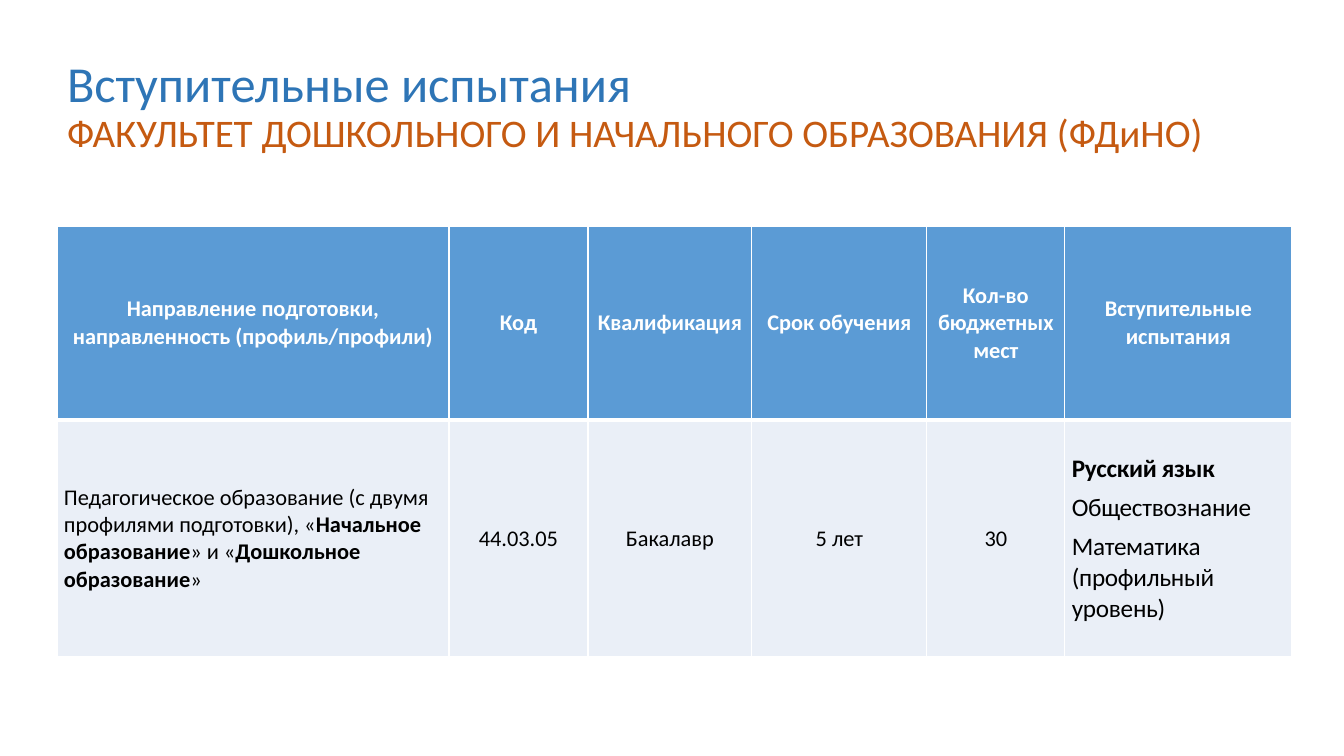
from lxml.etree import SubElement
from pptx import Presentation
from pptx.dml.color import RGBColor
from pptx.enum.text import MSO_ANCHOR, MSO_AUTO_SIZE, PP_ALIGN
from pptx.oxml.ns import qn
from pptx.util import Pt

FONT = "Calibri"
BLACK = RGBColor(0x00, 0x00, 0x00)
WHITE = RGBColor(0xFF, 0xFF, 0xFF)
TITLE_BLUE = RGBColor(0x2E, 0x75, 0xB6)
FACULTY_ORANGE = RGBColor(0xC5, 0x5A, 0x11)
HEADER_BLUE = RGBColor(0x5B, 0x9B, 0xD5)
BODY_BLUE = RGBColor(0xEA, 0xEF, 0xF7)

COLUMN_WIDTHS = [392, 139, 164, 175, 138, 227]
ROW_HEIGHTS = [194, 237]
HEADERS = [
    "Направление подготовки,\nнаправленность (профиль/профили)",
    "Код",
    "Квалификация",
    "Срок обучения",
    "Кол-во бюджетных мест",
    "Вступительные испытания",
]
PROGRAMME = [
    "Педагогическое образование (с двумя профилями подготовки), "
    "«**Начальное образование**» и «**Дошкольное образование**»",
    "44.03.05",
    "Бакалавр",
    "5 лет",
    "30",
]
EXAMS = "**Русский язык**\nОбществознание\nМатематика (профильный уровень)"


def px(n):
    return round(n * 914400 / 100.8)


class SlideBuilder:
    def __init__(self, prs):
        self.s = prs.slides.add_slide(prs.slide_layouts[5])

    def style(self, r, size, color, bold=False):
        r.font.name = FONT
        r.font.size = Pt(size)
        r.font.bold = bold
        r.font.color.rgb = color

    def title(self, x, y, w, h, lines):
        sp = self.s.shapes.title
        sp.left, sp.top, sp.width, sp.height = px(x), px(y), px(w), px(h)
        tf = sp.text_frame
        tf.text = "\n".join(text for text, _, _ in lines)
        tf.word_wrap = True
        tf.auto_size = MSO_AUTO_SIZE.NONE
        tf.vertical_anchor = MSO_ANCHOR.MIDDLE
        tf.margin_bottom = px(13)
        for p, (_, size, color) in zip(tf.paragraphs, lines):
            p.alignment = PP_ALIGN.LEFT
            p.line_spacing = 0.9
            self.style(p.runs[0], size, color)

    def table(self, x, y, widths, heights):
        frame = self.s.shapes.add_table(len(heights), len(widths), px(x), px(y),
                                        px(sum(widths)), px(sum(heights)))
        table = frame.table
        table.first_row = table.horz_banding = False
        for column, width in zip(table.columns, widths):
            column.width = px(width)
        for row, height in zip(table.rows, heights):
            row.height = px(height)
        return table

    def borders(self, cell, top, bottom):
        tcPr = cell._tc.get_or_add_tcPr()
        for side, width in (("L", 1), ("R", 1), ("T", top), ("B", bottom)):
            ln = SubElement(tcPr, qn(f"a:ln{side}"), w=str(Pt(width)))
            SubElement(SubElement(ln, qn("a:solidFill")), qn("a:srgbClr"), val=str(WHITE))

    def cell(self, cell, text, fill, color, size=16, bold=False,
             align=PP_ALIGN.CENTER, space_after=0, tracking=0, top=1, bottom=1):
        """Fill a cell; text between ** marks is bold."""
        self.borders(cell, top, bottom)
        cell.fill.solid()
        cell.fill.fore_color.rgb = fill
        cell.vertical_anchor = MSO_ANCHOR.MIDDLE
        cell.margin_left = cell.margin_right = px(7)
        cell.margin_top = cell.margin_bottom = 0
        tf = cell.text_frame
        for i, line in enumerate(text.split("\n")):
            p = tf.add_paragraph() if i else tf.paragraphs[0]
            p.alignment = align
            p.space_after = Pt(space_after)
            for j, part in enumerate(line.split("**")):
                if part:
                    r = p.add_run()
                    r.text = part
                    self.style(r, size, color, bold or j % 2 == 1)
                    if tracking:
                        r._r.get_or_add_rPr().set("spc", str(tracking))


def main():
    prs = Presentation()
    prs.slide_width, prs.slide_height = px(1344), px(756)
    slide = SlideBuilder(prs)
    slide.title(57, 27, 1287, 169, [
        ("Вступительные испытания", 36, TITLE_BLUE),
        ("ФАКУЛЬТЕТ ДОШКОЛЬНОГО И НАЧАЛЬНОГО ОБРАЗОВАНИЯ (ФДиНО)", 27.9, FACULTY_ORANGE),
    ])
    table = slide.table(57, 226, COLUMN_WIDTHS, ROW_HEIGHTS)
    for col, text in enumerate(HEADERS):
        slide.cell(table.cell(0, col), text, HEADER_BLUE, WHITE, bold=True, bottom=3)
    for col, text in enumerate(PROGRAMME):
        align = PP_ALIGN.CENTER if col else PP_ALIGN.LEFT
        slide.cell(table.cell(1, col), text, BODY_BLUE, BLACK, align=align, top=3)
    slide.cell(table.cell(1, len(PROGRAMME)), EXAMS, BODY_BLUE, BLACK, size=18,
               align=PP_ALIGN.LEFT, space_after=6, tracking=-20, top=3)
    prs.save("out.pptx")


if __name__ == "__main__":
    main()
